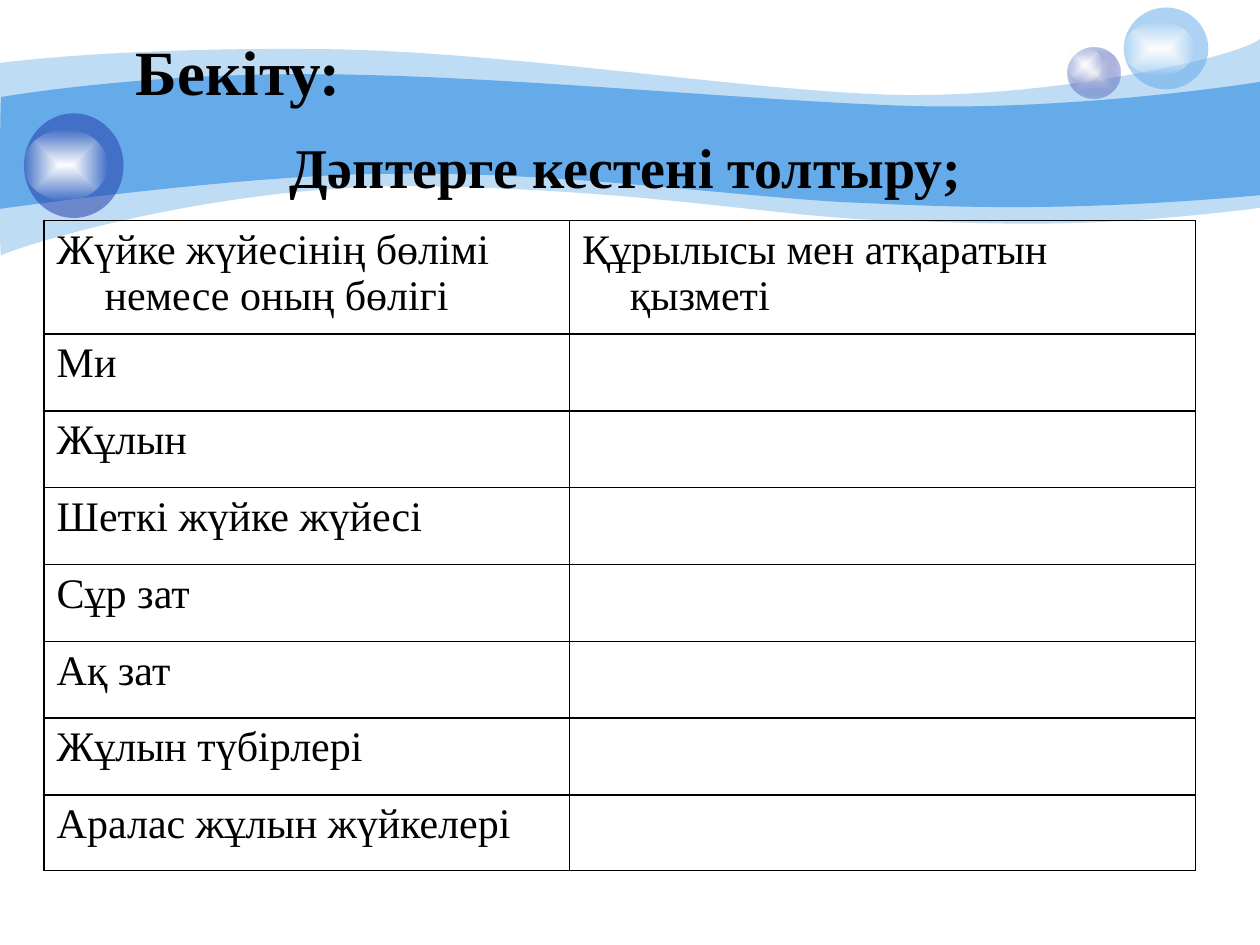
from lxml import etree
from pptx import Presentation
from pptx import util as u
from pptx.dml.color import RGBColor
from pptx.enum import shapes, text
from pptx.oxml.ns import qn

FONT = "Times New Roman"
BLACK, WHITE, SKY, NAVY, MIST = "000000", "FFFFFF", "65AAE9", "233DA9", "E1E2ED"

# Each ribbon: a start point, then curves (six numbers) and lines (two numbers).
PALE_RIBBON = [
    (0, 0.5),
    (0.24, 0.47, 1.07, 0.38, 2.47, 0.39),
    (3.86, 0.39, 5.75, 0.7, 6.99, 0.75),
    (8.22, 0.8, 9.8, 0.47, 10, 0.31),
    (10, 1.65),
    (8.58, 1.83, 7.87, 1.77, 7.05, 1.75),
    (6.22, 1.73, 5.15, 1.51, 3.43, 1.48),
    (1.72, 1.44, 0.04, 1.99, 0.01, 2.03),
    (-0.01, 2.08, 0, 0.75, 0, 0.5),
]
BRIGHT_RIBBON = [
    (0.01, 0.77),
    (0.02, 0.77, 1.1, 0.58, 2.48, 0.59),
    (3.86, 0.59, 5.95, 0.8, 7.18, 0.84),
    (8.41, 0.88, 9.76, 0.69, 10, 0.65),
    (10, 1.55),
    (8.53, 1.68, 7.65, 1.65, 6.82, 1.61),
    (5.99, 1.58, 4.47, 1.36, 3.17, 1.38),
    (2.03, 1.37, -0.02, 1.66, -0.01, 1.66),
    (0, 1.66, 0, 0.77, 0.01, 0.77),
]

HEADINGS = ["Жүйке жүйесінің бөлімі немесе оның бөлігі", "Құрылысы мен атқаратын қызметі"]
PARTS = ["Ми", "Жұлын", "Шеткі жүйке жүйесі", "Сұр зат", "Ақ зат",
         "Жұлын түбірлері", "Аралас жұлын жүйкелері"]
COLUMN_WIDTHS = [4.17, 4.97]
ROW_HEIGHTS = [0.69] + [0.61] * 6 + [0.6]


def rgb(color):
    return RGBColor.from_string(color)


def add_color(parent, color, opacity=100):
    node = etree.SubElement(parent, qn("a:srgbClr"), val=color)
    if opacity < 100:
        etree.SubElement(node, qn("a:alpha"), val=str(opacity * 1000))


def fill_solid(shape, color, opacity=100):
    shape.shadow.inherit = False
    shape.line.fill.background()
    shape.fill.solid()
    shape.fill.fore_color.rgb = rgb(color)
    if opacity < 100:
        node = shape.fill._xPr.find(qn("a:solidFill")).find(qn("a:srgbClr"))
        etree.SubElement(node, qn("a:alpha"), val=str(opacity * 1000))


def fill_glow(shape, center, edge, edge_opacity):
    """Fill from the centre outwards, following the outline."""
    fill_solid(shape, center)
    properties = shape.fill._xPr
    solid = properties.find(qn("a:solidFill"))
    gradient = etree.Element(qn("a:gradFill"), rotWithShape="1")
    stops = etree.SubElement(gradient, qn("a:gsLst"))
    for position, color, opacity in [(0, center, 100), (100, edge, edge_opacity)]:
        stop = etree.SubElement(stops, qn("a:gs"), pos=str(position * 1000))
        add_color(stop, color, opacity)
    route = etree.SubElement(gradient, qn("a:path"), path="shape")
    etree.SubElement(route, qn("a:fillToRect"), l="50000", t="50000", r="50000", b="50000")
    properties.replace(solid, gradient)


def bend_lines(ribbon, segments):
    """Merge the three lines through each curve's points into one cubic curve."""
    lines = iter(list(ribbon._element.iter(qn("a:lnTo"))))
    for segment in segments:
        group = [next(lines) for _ in range(len(segment) // 2)]
        if len(group) == 3:
            curve = etree.Element(qn("a:cubicBezTo"))
            group[0].addprevious(curve)
            for line in group:
                curve.append(line[0])
                line.getparent().remove(line)


def add_ribbon(slide, outline, opacity=100):
    start, *segments = outline
    points = [(u.Inches(segment[i]), u.Inches(segment[i + 1]))
              for segment in segments for i in range(0, len(segment), 2)]
    builder = slide.shapes.build_freeform(*map(u.Inches, start))
    builder.add_line_segments(points, close=True)
    ribbon = builder.convert_to_shape()
    bend_lines(ribbon, segments)
    fill_solid(ribbon, SKY, opacity)


def add_ellipse(slide, *box):
    return slide.shapes.add_shape(shapes.MSO_SHAPE.OVAL, *map(u.Inches, box))


def add_bubbles(slide):
    fill_glow(add_ellipse(slide, 8.47, 0.38, 0.42, 0.4), MIST, NAVY, 31)
    fill_glow(add_ellipse(slide, 8.47, 0.38, 0.28, 0.27), WHITE, WHITE, 0)
    fill_solid(add_ellipse(slide, 8.92, 0.06, 0.67, 0.65), SKY, 53)
    fill_glow(add_ellipse(slide, 8.92, 0.17, 0.56, 0.43), WHITE, WHITE, 0)
    fill_solid(add_ellipse(slide, 0.19, 0.9, 0.79, 0.83), NAVY, 53)
    fill_glow(add_ellipse(slide, 0.19, 1.03, 0.66, 0.56), WHITE, WHITE, 0)


def style_runs(paragraph, size, bold=False):
    for run in paragraph.runs:
        run.font.name = FONT
        run.font.size = u.Pt(size)
        run.font.bold = bold
        run.font.color.rgb = rgb(BLACK)


def add_heading(slide, words, box, size, align, anchor, wrap):
    frame = slide.shapes.add_textbox(*map(u.Inches, box)).text_frame
    frame.word_wrap = wrap
    if not wrap:
        frame.auto_size = text.MSO_AUTO_SIZE.SHAPE_TO_FIT_TEXT
    frame.vertical_anchor = anchor
    frame.text = words
    frame.paragraphs[0].alignment = align
    style_runs(frame.paragraphs[0], size, bold=True)


def style_cell(cell):
    properties = cell._tc.get_or_add_tcPr()
    for side in ("lnL", "lnR", "lnT", "lnB"):
        border = etree.SubElement(properties, qn("a:" + side), w=str(u.Pt(1)))
        add_color(etree.SubElement(border, qn("a:solidFill")), BLACK)
    cell.fill.background()


def add_nerve_table(slide):
    rows = [HEADINGS] + [[part, ""] for part in PARTS]
    frame = slide.shapes.add_table(
        len(rows), len(HEADINGS), u.Inches(0.35), u.Inches(1.75),
        u.Inches(9.15), u.Inches(5.15))
    table = frame.table
    table.first_row = table.horz_banding = False
    for column, width in zip(table.columns, COLUMN_WIDTHS):
        column.width = u.Inches(width)
    for row, height, entries in zip(table.rows, ROW_HEIGHTS, rows):
        row.height = u.Inches(height)
        for cell, entry in zip(row.cells, entries):
            style_cell(cell)
            if entry:
                cell.text_frame.text = entry
                paragraph = cell.text_frame.paragraphs[0]
                indent = paragraph._p.get_or_add_pPr()
                indent.set("marL", str(u.Inches(0.38)))
                indent.set("indent", str(u.Inches(-0.38)))
                style_runs(paragraph, 24)
    frame.width, frame.height = u.Inches(9.15), u.Inches(5.15)


def main():
    deck = Presentation()
    deck.slide_width, deck.slide_height = u.Inches(10), u.Inches(7.5)
    slide = deck.slides.add_slide(deck.slide_layouts[6])
    add_ribbon(slide, PALE_RIBBON, 41)
    add_ribbon(slide, BRIGHT_RIBBON)
    add_bubbles(slide)
    add_heading(slide, "Дәптерге кестені толтыру; ", (0.98, 1.01, 8.08, 0.62), 32,
                text.PP_ALIGN.CENTER, text.MSO_ANCHOR.MIDDLE, wrap=True)
    add_nerve_table(slide)
    add_heading(slide, "Бекіту:", (0.98, 0.21, 1.84, 0.7), 36,
                text.PP_ALIGN.LEFT, text.MSO_ANCHOR.TOP, wrap=False)
    deck.save("out.pptx")


if __name__ == "__main__":
    main()
